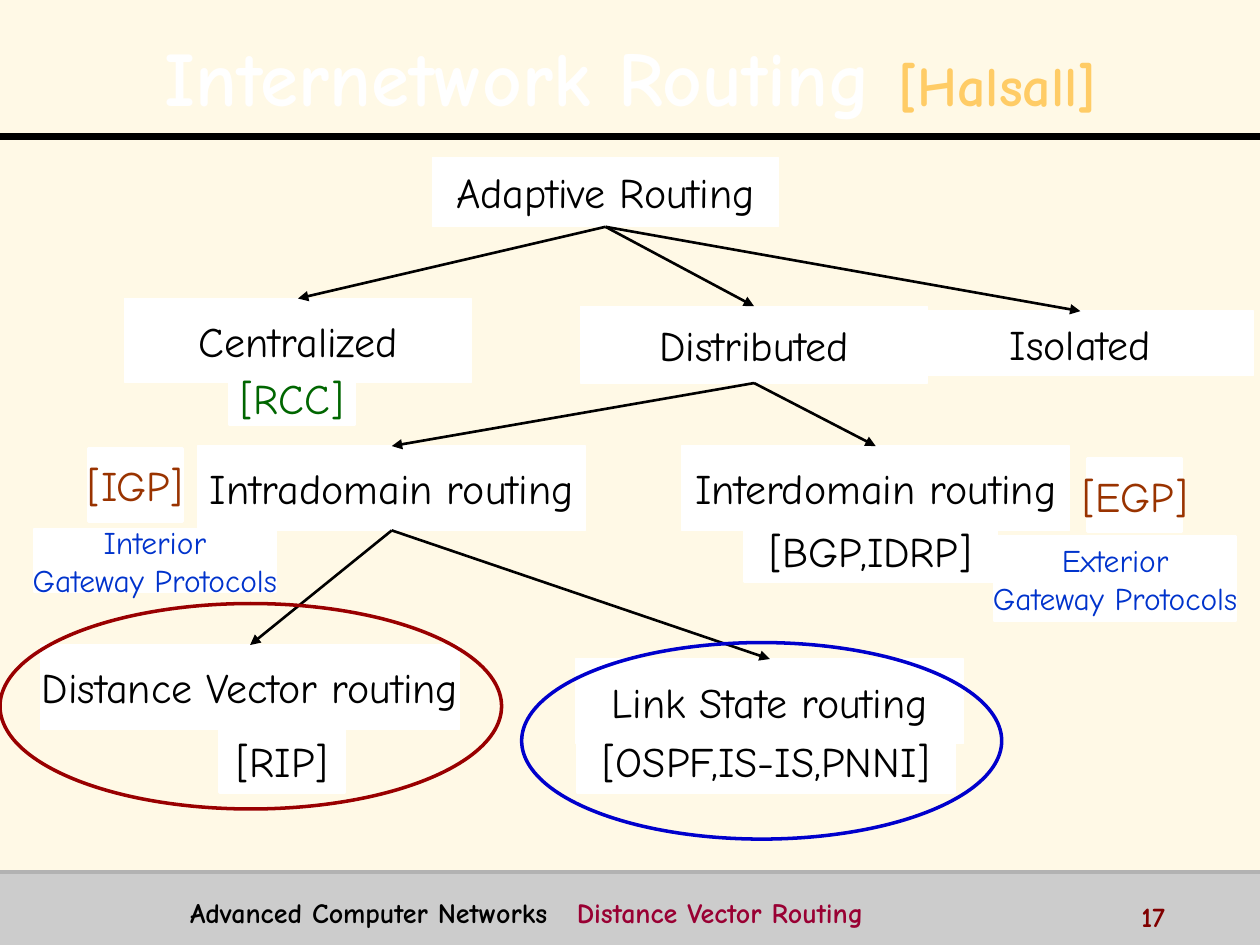
from lxml.etree import SubElement
from pptx import Presentation
from pptx.dml.color import RGBColor
from pptx.enum.shapes import MSO_CONNECTOR, MSO_SHAPE
from pptx.enum.text import MSO_ANCHOR, PP_ALIGN
from pptx.oxml import parse_xml
from pptx.oxml.ns import nsdecls, qn
from pptx.util import Pt

COLORS = {
    "cream": "FFF9E6", "white": "FFFFFF", "black": "000000", "gold": "FFCC66",
    "band": "CCCCCC", "band edge": "B2B2B2", "crimson": "990033", "maroon": "800000",
    "brown": "993300", "green": "006600", "blue": "0033CC",
    "blue ring": "0000CC", "red ring": "990000",
}
WIDTH, HEIGHT = 720, 540
BOTTOM, TOP = 2, 0


def rgb(name):
    return RGBColor.from_string(COLORS[name])


class SlideBuilder:
    def __init__(self, slide, font="Comic Neue"):
        self.slide = slide
        self.font = font

    def background(self, color):
        fill = self.slide.background.fill
        fill.solid()
        fill.fore_color.rgb = rgb(color)

    def run(self, paragraph, text, size, color, bold=False):
        run = paragraph.add_run()
        run.text = text
        run.font.name = self.font
        run.font.size = Pt(size)
        run.font.bold = bold
        run.font.color.rgb = rgb(color)
        return run

    def title(self, place, parts):
        title = self.slide.shapes.title
        title.left, title.top, title.width, title.height = map(Pt, place)
        frame = title.text_frame
        frame.word_wrap = True
        frame.vertical_anchor = MSO_ANCHOR.MIDDLE
        paragraph = frame.paragraphs[0]
        paragraph.alignment = PP_ALIGN.CENTER
        paragraph.line_spacing = 1.1
        for text, size, color in parts:
            run = self.run(paragraph, text, size, color, bold=True)
            self.text_shadow(run)

    def text_shadow(self, run):
        shadow = parse_xml(
            f'<a:effectLst {nsdecls("a")}><a:outerShdw dist="35921" dir="2700000">'
            '<a:srgbClr val="000000"/></a:outerShdw></a:effectLst>')
        run.font._element.find(qn("a:solidFill")).addnext(shadow)

    def text(self, place, parts, tab=None):
        box = self.slide.shapes.add_textbox(*map(Pt, place))
        box.text_frame.word_wrap = True
        paragraph = box.text_frame.paragraphs[0]
        if tab:
            stops = SubElement(paragraph._p.get_or_add_pPr(), qn("a:tabLst"))
            SubElement(stops, qn("a:tab"), pos=str(Pt(tab)), algn="l")
        for text, color in parts:
            self.run(paragraph, text, 16, color, bold=True)

    def shape(self, preset, place, fill=None, line=None, weight=0.75):
        shape = self.slide.shapes.add_shape(preset, *map(Pt, place))
        shape.shadow.inherit = False
        if fill:
            shape.fill.solid()
            shape.fill.fore_color.rgb = rgb(fill)
        else:
            shape.fill.background()
        if line:
            shape.line.color.rgb = rgb(line)
            shape.line.width = Pt(weight)
        else:
            shape.line.fill.background()
        return shape

    def label(self, place, lines, size=24, color="black", weight=0.75):
        box = self.shape(MSO_SHAPE.RECTANGLE, place, "white", "white", weight)
        frame = box.text_frame
        frame.word_wrap = False
        frame.vertical_anchor = MSO_ANCHOR.MIDDLE
        for index, text in enumerate(lines):
            paragraph = frame.add_paragraph() if index else frame.paragraphs[0]
            paragraph.alignment = PP_ALIGN.CENTER
            self.run(paragraph, text, size, color)
        return box

    def line(self, start, end, color, weight):
        line = self.slide.shapes.add_connector(
            MSO_CONNECTOR.STRAIGHT, *map(Pt, (*start, *end)))
        line.line.color.rgb = rgb(color)
        line.line.width = Pt(weight)
        SubElement(line._element.spPr, qn("a:effectLst"))
        return line

    def arrow(self, parent, child):
        arrow = self.line((0, 0), (0, 0), "black", 1.5)
        arrow.begin_connect(parent, BOTTOM)
        arrow.end_connect(child, TOP)
        SubElement(arrow.line._get_or_add_ln(), qn("a:tailEnd"), type="triangle")


CATEGORIES = {
    "Adaptive Routing": (247, 90, 198, 39.6),
    "Centralized": (71.3, 170.6, 198, 48.2),
    "Distributed": (331.9, 175, 198, 43.9),
    "Isolated": (518.4, 177.8, 198, 36.7),
    "Intradomain routing": (113, 254.9, 221.8, 48.2),
    "Interdomain routing": (389.5, 254.9, 221.8, 48.2),
    "Distance Vector routing": (23, 368.6, 239.8, 48.2),
    "Link State routing": (329, 376.6, 221.8, 48.2),
}
BRANCHES = {
    "Adaptive Routing": ["Centralized", "Distributed", "Isolated"],
    "Distributed": ["Intradomain routing", "Interdomain routing"],
    "Intradomain routing": ["Distance Vector routing", "Link State routing"],
}
ANNOTATIONS = [
    ((50.4, 256.3, 54, 41.8), ["[IGP]"], 24, "brown"),
    ((621.4, 262.1, 54, 41.8), ["[EGP]"], 24, "brown"),
    ((425.5, 296.6, 144, 36), ["[BGP,IDRP]"], 24, "black"),
    ((329.8, 416.9, 216, 36), ["[OSPF,IS-IS,PNNI]"], 24, "black"),
    ((125.3, 416.9, 72, 36), ["[RIP]"], 24, "black"),
    ((131, 212.4, 72, 30.2), ["[RCC]"], 24, "green"),
    ((19.4, 302.4, 138.2, 36), ["Interior", "Gateway Protocols"], 18, "blue"),
    ((568.1, 306.7, 138.2, 48.2), ["Exterior", "Gateway Protocols"], 18, "blue"),
]
RINGS = [
    ((298.1, 367.2, 274.3, 112.3), "blue ring"),
    ((0, 344.9, 286.6, 117.4), "red ring"),
]
HEADER_Y, FOOTER_Y = 77.8, 498.2


def main():
    deck = Presentation()
    deck.slide_width, deck.slide_height = Pt(WIDTH), Pt(HEIGHT)
    builder = SlideBuilder(deck.slides.add_slide(deck.slide_layouts[5]))

    builder.background("cream")
    builder.shape(MSO_SHAPE.RECTANGLE, (0, FOOTER_Y, WIDTH, HEIGHT - FOOTER_Y), "band")
    builder.line((0, HEADER_Y), (WIDTH, HEADER_Y), "black", 4)
    builder.line((0, FOOTER_Y), (WIDTH, FOOTER_Y), "band edge", 2)
    builder.title((14.4, 9.4, 691.9, 62.6),
                  [("Internetwork Routing ", 44, "white"), ("[Halsall]", 32, "gold")])
    builder.text((101.5, 508.3, 524.2, 22.3),
                 [("Advanced Computer Networks\t", "black"),
                  ("Distance Vector Routing", "crimson")], tab=221)
    builder.text((645.1, 510.5, 72, 18), [("17", "maroon")])

    boxes = {name: builder.label(place, [name]) for name, place in CATEGORIES.items()}
    for place, lines, size, color in ANNOTATIONS:
        builder.label(place, lines, size, color, weight=1.5)
    for parent, children in BRANCHES.items():
        for child in children:
            builder.arrow(boxes[parent], boxes[child])
    for place, color in RINGS:
        builder.shape(MSO_SHAPE.OVAL, place, line=color, weight=2)

    deck.save("out.pptx")


if __name__ == "__main__":
    main()
